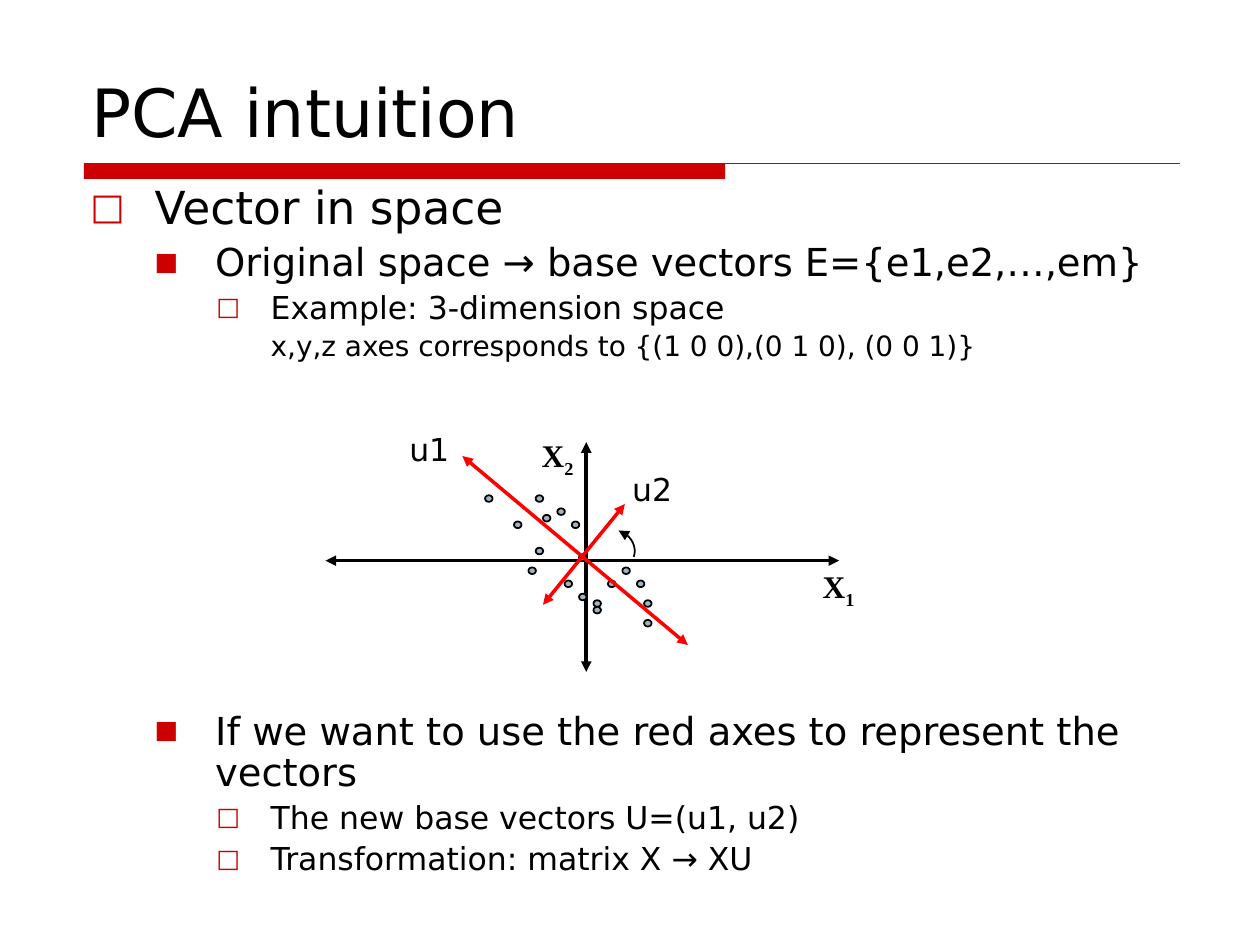
from dataclasses import dataclass

from lxml import etree
from pptx import Presentation
from pptx.dml.color import RGBColor
from pptx.enum import shapes, text
from pptx.oxml import ns
from pptx.util import Pt


@dataclass(frozen=True)
class Theme:
    ink: RGBColor = RGBColor(0, 0, 0)
    accent: RGBColor = RGBColor(0xCC, 0, 0)
    vector: RGBColor = RGBColor(0xFF, 0, 0)
    dot: RGBColor = RGBColor(0xA3, 0xB2, 0xC1)
    font: str = "DejaVu Sans"
    math_font: str = "Times New Roman"
    title: float = 38
    levels: tuple = (26, 22, 18, 16)
    label: float = 18


T = Theme()

MARGINS = (36.7, 71.3, 103, 103)
HANGS = (36.7, 34.6, 31, 0)
BULLETS = (("□", 80), ("■", 65), ("□", 80), None)
OUTLINE = [
    (0, "Vector in space", 0),
    (1, "Original space → base vectors E={e1,e2,…,em}", 5.1),
    (2, "Example: 3-dimension space", 4.2),
    (3, "x,y,z axes corresponds to {(1 0 0),(0 1 0), (0 0 1)}", 3.7),
    (1, "If we want to use the red axes to represent the vectors", 199.5),
    (2, "The new base vectors U=(u1, u2)", 4.2),
    (2, "Transformation: matrix X → XU", 4.2),
]

DOTS = [(0, 0), (4, 4), (7, 8), (6, 11), (8, 3), (10, 2), (12, 4), (13, 9), (11, 13),
        (17, 13), (15, 16), (13, 15), (15, 17), (19, 11), (21, 13), (22, 16), (22, 19), (7, 0)]
DOT_STEP = (4.13, 3.75)
DOT_ORIGIN = (91.2, 41)
ARC = [(176.2, 76.2), (178.3, 69.8), (174, 63.3), (167.5, 61.1)]


def style(r, size, font=T.font, bold=False):
    r.font.size = Pt(size)
    r.font.name = font
    r.font.bold = bold
    r.font.color.rgb = T.ink


def add_heads(line, *ends):
    ln = line._get_or_add_ln()
    for end in ends:
        etree.SubElement(ln, ns.qn(f"a:{end}"), type="triangle")


def add_line(s, start, end, color, width):
    c = s.shapes.add_connector(shapes.MSO_CONNECTOR.STRAIGHT, *map(Pt, start + end))
    c.line.color.rgb = color
    c.line.width = Pt(width)
    etree.SubElement(c._element.spPr, ns.qn("a:effectLst"))
    return c


def add_bullet(p, level):
    pPr = p._p.get_or_add_pPr()
    pPr.set("marL", str(Pt(MARGINS[level])))
    pPr.set("indent", str(-Pt(HANGS[level])))
    if BULLETS[level] is None:
        etree.SubElement(pPr, ns.qn("a:buNone"))
        return
    char, percent = BULLETS[level]
    color = etree.SubElement(pPr, ns.qn("a:buClr"))
    etree.SubElement(color, ns.qn("a:srgbClr"), val=str(T.accent))
    etree.SubElement(pPr, ns.qn("a:buSzPct"), val=str(percent * 1000))
    etree.SubElement(pPr, ns.qn("a:buFont"), typeface=T.font)
    etree.SubElement(pPr, ns.qn("a:buChar"), char=char)


def add_title(s, x, y, w, h):
    sp = s.shapes.title
    sp.left, sp.top, sp.width, sp.height = map(Pt, (x, y, w, h))
    tf = sp.text_frame
    tf.text = "PCA intuition"
    tf.vertical_anchor = text.MSO_ANCHOR.BOTTOM
    p = tf.paragraphs[0]
    p.alignment = text.PP_ALIGN.LEFT
    style(p.runs[0], T.title)


def add_rule(s, x, y, w, h):
    add_line(s, (x, y), (x + w, y), T.accent, 0.75)
    bar = s.shapes.add_shape(shapes.MSO_SHAPE.RECTANGLE, *map(Pt, (x, y, 0.585 * w, h)))
    bar.shadow.inherit = False
    bar.fill.solid()
    bar.fill.fore_color.rgb = T.accent
    bar.line.fill.background()


def add_outline(s, x, y, w, h):
    tf = s.shapes.add_textbox(*map(Pt, (x, y, w, h))).text_frame
    tf.word_wrap = True
    for i, (level, line, before) in enumerate(OUTLINE):
        p = tf.add_paragraph() if i else tf.paragraphs[0]
        p.text = line
        p.level = level
        p.line_spacing = 0.9
        p.space_before = Pt(before)
        add_bullet(p, level)
        style(p.runs[0], T.levels[level])


def add_label(s, x, y, w, line, font=T.font, subscript=None):
    tf = s.shapes.add_textbox(*map(Pt, (x, y, w, 29))).text_frame
    tf.word_wrap = subscript is not None
    p = tf.paragraphs[0]
    p.text = line
    style(p.runs[0], T.label, font, bold=subscript is not None)
    if subscript:
        r = p.add_run()
        r.text = subscript
        style(r, T.label, font, bold=True)
        r.font._element.set("baseline", "-25000")


def add_dot(s, x, y):
    sp = s.shapes.add_shape(shapes.MSO_SHAPE.OVAL, *map(Pt, (x, y, 4.3, 3.8)))
    sp.shadow.inherit = False
    sp.fill.solid()
    sp.fill.fore_color.rgb = T.dot
    sp.line.color.rgb = T.ink
    sp.line.width = Pt(1)


def bezier(t):
    weights = ((1 - t) ** 3, 3 * t * (1 - t) ** 2, 3 * t ** 2 * (1 - t), t ** 3)
    return tuple(sum(k * pt[axis] for k, pt in zip(weights, ARC)) for axis in (0, 1))


def add_rotation_arc(s, x, y):
    points = [(Pt(x + px), Pt(y + py)) for px, py in (bezier(i / 12) for i in range(13))]
    fb = s.shapes.build_freeform(*points[0])
    fb.add_line_segments(points[1:], close=False)
    sp = fb.convert_to_shape()
    sp.shadow.inherit = False
    sp.fill.background()
    sp.line.color.rgb = T.ink
    sp.line.width = Pt(1)
    add_heads(sp.line, "tailEnd")


def add_diagram(s, x, y, w, h):
    def axis(start, end, color):
        c = add_line(s, (x + start[0], y + start[1]), (x + end[0], y + end[1]), color, 2)
        add_heads(c.line, "headEnd", "tailEnd")

    axis((149, h), (149, 10.7), T.ink)
    axis((0, 78.4), (w - 24.5, 78.4), T.ink)
    add_label(s, x + w - 41, y + 78.4, 41, "X", T.math_font, "1")
    add_label(s, x + 116.4, y + 3.5, 46, "X", T.math_font, "2")
    for col, row in DOTS:
        add_dot(s, x + DOT_ORIGIN[0] + col * DOT_STEP[0], y + DOT_ORIGIN[1] + row * DOT_STEP[1])
    add_rotation_arc(s, x, y)
    axis((124.3, 103.6), (171.1, 46), T.vector)
    axis((78.2, 18.6), (207.1, 126.6), T.vector)
    add_label(s, x + 40.8, y, 37.4, "u1")
    add_label(s, x + 168.2, y + 23, 37.4, "u2")


def main():
    prs = Presentation()
    prs.slide_width, prs.slide_height = Pt(720), Pt(540)
    s = prs.slides.add_slide(prs.slide_layouts[5])
    add_rule(s, 48, 93.6, 626.4, 8.6)
    add_title(s, 45, 6, 630, 84)
    add_outline(s, 44.6, 102.2, 630, 390)
    add_diagram(s, 186, 242, 318, 142)
    prs.save("out.pptx")


if __name__ == "__main__":
    main()
